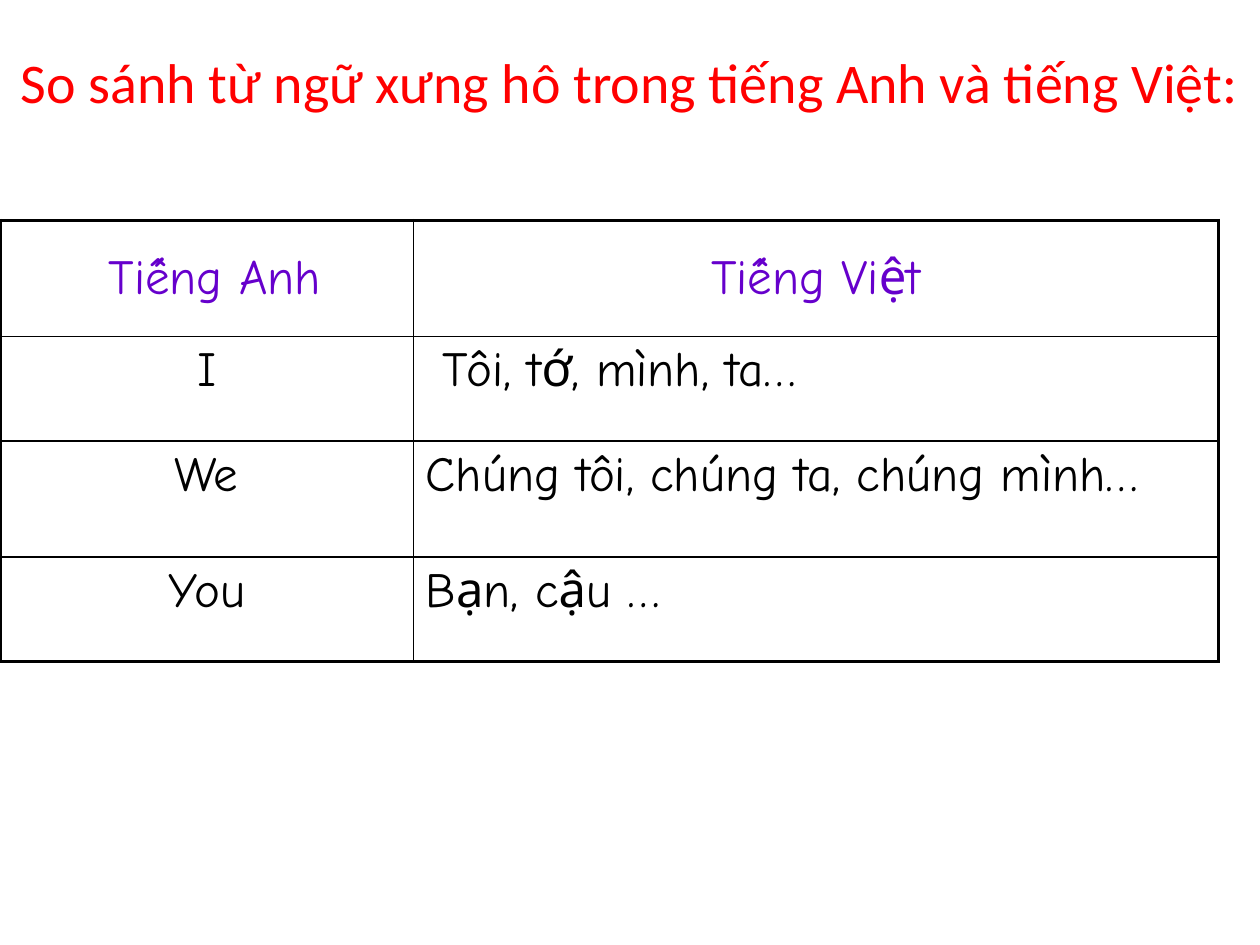
from dataclasses import dataclass

from lxml.etree import SubElement
from pptx import Presentation
from pptx.dml.color import RGBColor
from pptx.enum.text import MSO_ANCHOR, PP_ALIGN
from pptx.oxml.ns import qn
from pptx.util import Inches, Pt


@dataclass(frozen=True)
class Theme:
    title_font: str = "Calibri"
    table_font: str = "Comic Neue"
    title_size: int = 32
    table_size: int = 28
    title_color: str = "FF0000"
    header_color: str = "6600CC"
    body_color: str = "000000"
    border_color: str = "000000"
    outer_border: float = 2.25
    inner_border: float = 1


def write_text(frame, text, font, size, color, align=PP_ALIGN.LEFT):
    frame.word_wrap = True
    paragraph = frame.paragraphs[0]
    paragraph.alignment = align
    run = paragraph.add_run()
    run.text = text
    run.font.name = font
    run.font.size = Pt(size)
    run.font.color.rgb = RGBColor.from_string(color)


class SlideBuilder:
    def __init__(self, slide, theme):
        self.slide = slide
        self.theme = theme

    def add_title(self, text, left, top, width, height):
        box = self.slide.shapes.add_textbox(
            Inches(left), Inches(top), Inches(width), Inches(height))
        write_text(box.text_frame, text, self.theme.title_font,
                   self.theme.title_size, self.theme.title_color, PP_ALIGN.CENTER)

    def add_table(self, rows, left, top, column_widths, row_heights):
        table = self.slide.shapes.add_table(
            len(rows), len(column_widths), Inches(left), Inches(top),
            Inches(sum(column_widths)), Inches(sum(row_heights))).table
        table.first_row = table.horz_banding = False
        for column, width in zip(table.columns, column_widths):
            column.width = Inches(width)
        for row, height in zip(table.rows, row_heights):
            row.height = Inches(height)
        last_row, last_column = len(rows) - 1, len(column_widths) - 1
        for row_index, texts in enumerate(rows):
            for column_index, text in enumerate(texts):
                cell = table.cell(row_index, column_index)
                is_header = row_index == 0
                centered = is_header or column_index == 0
                write_text(
                    cell.text_frame, text, self.theme.table_font, self.theme.table_size,
                    self.theme.header_color if is_header else self.theme.body_color,
                    PP_ALIGN.CENTER if centered else PP_ALIGN.LEFT)
                cell.vertical_anchor = MSO_ANCHOR.MIDDLE if is_header else MSO_ANCHOR.TOP
                self.set_borders(cell, {
                    "a:lnL": column_index == 0,
                    "a:lnR": column_index == last_column,
                    "a:lnT": row_index == 0,
                    "a:lnB": row_index == last_row,
                })
                cell.fill.background()

    def set_borders(self, cell, outer_sides):
        properties = cell._tc.get_or_add_tcPr()
        for tag, is_outer in outer_sides.items():
            width = self.theme.outer_border if is_outer else self.theme.inner_border
            line = SubElement(properties, qn(tag), w=str(Pt(width)))
            fill = SubElement(line, qn("a:solidFill"))
            SubElement(fill, qn("a:srgbClr"), val=self.theme.border_color)


def main():
    presentation = Presentation()
    presentation.slide_width = Inches(10)
    presentation.slide_height = Inches(7.5)
    slide = presentation.slides.add_slide(presentation.slide_layouts[6])
    builder = SlideBuilder(slide, Theme())
    pronouns = [
        (" Tiếng Anh", "Tiếng Việt"),
        ("I", " Tôi, tớ, mình, ta…"),
        ("We", "Chúng tôi, chúng ta, chúng mình…"),
        ("You", "Bạn, cậu …"),
    ]
    builder.add_table(pronouns, 0, 1.75, [3.28, 6.39], [0.92, 0.83] * 2)
    builder.add_title("So sánh từ ngữ xưng hô trong tiếng Anh và tiếng Việt:",
                      0, 0.33, 10, 0.92)
    presentation.save("out.pptx")


if __name__ == "__main__":
    main()
